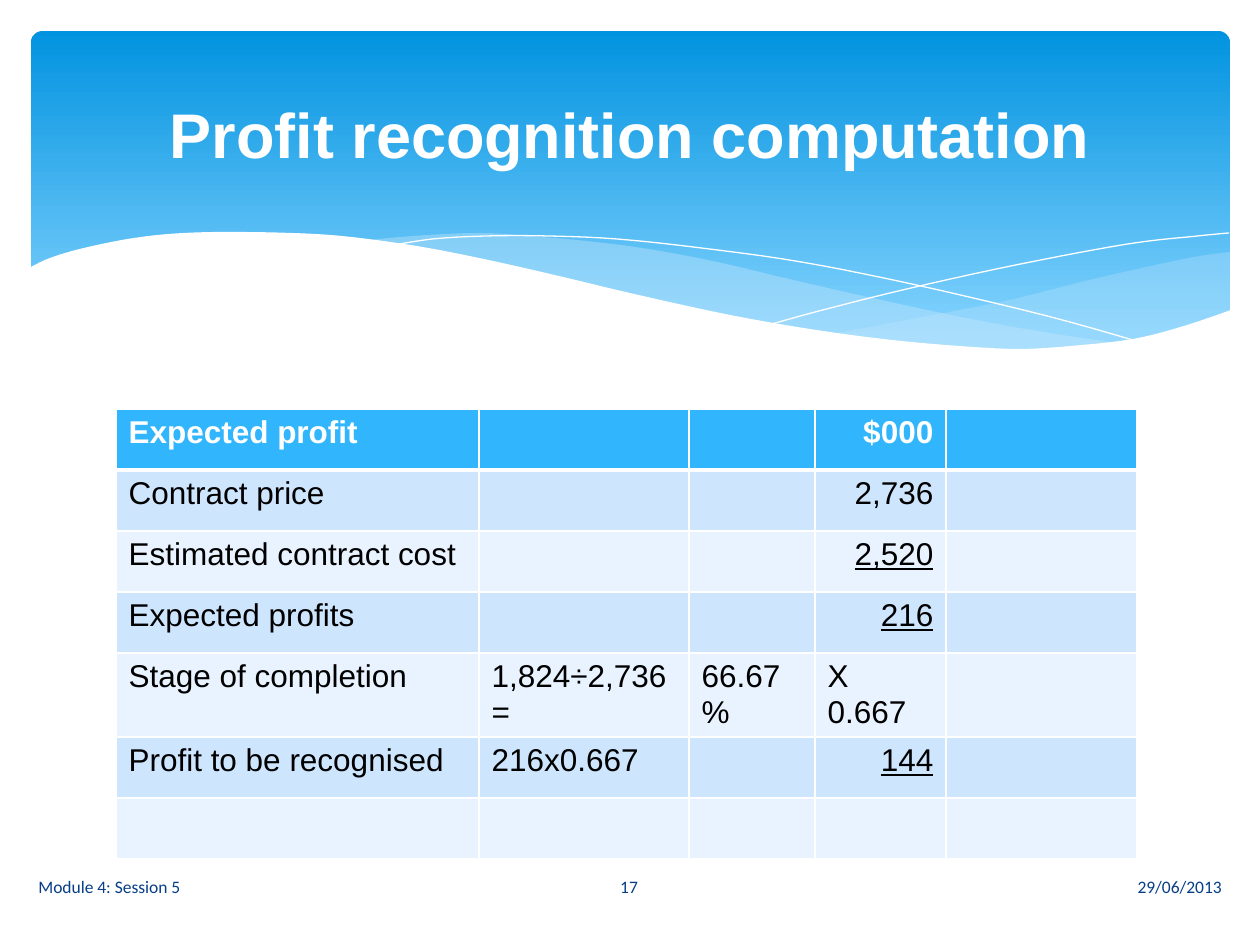
from lxml import etree
from pptx import Presentation
from pptx import util as u
from pptx.dml.color import RGBColor
from pptx.enum import shapes, text
from pptx.oxml import ns

PX = u.Inches(1) / 126
COLORS = {"white": "FFFFFF", "black": "000000", "navy": "073E87", "mist": "C6E7FC",
          "top": "0293E0", "bottom": "83D3FE", "header": "31B6FD",
          "band": "CEE5FE", "pale": "E8F3FF"}
LEFT, CENTER, RIGHT = text.PP_ALIGN.LEFT, text.PP_ALIGN.CENTER, text.PP_ALIGN.RIGHT

RIGHT_SWELL = [
    [(1230, 252), (1194, 257), (1142, 268), (1085, 281), (1014, 299), (949, 312), (833, 334)],
    [(833, 334), (888, 341), (954, 348), (1012, 350), (1076, 348), (1130, 340), (1178, 330),
     (1230, 311)]]
MIDDLE_SWELL = [
    [(1125, 344), (1055, 334), (976, 320), (890, 302), (793, 280), (717, 262), (648, 249),
     (586, 241), (529, 236), (479, 233), (413, 236), (360, 241)],
    [(360, 241), (431, 251), (509, 266), (566, 280), (668, 302), (757, 321), (838, 335),
     (910, 345), (989, 350), (1056, 350), (1125, 344)]]
FALLING_LINE = [(389, 246), (433, 239), (488, 236), (546, 236), (616, 239), (701, 248),
                (801, 262), (916, 285), (1047, 316), (1143, 343)]
RISING_LINE = [(772, 324), (823, 310), (907, 289), (1016, 265), (1128, 244), (1198, 236),
               (1229, 233)]
WHITE_WAVE = [
    [(1231, 310), (1184, 326), (1133, 339), (1071, 346), (1019, 349), (959, 346), (892, 340),
     (816, 330), (730, 315), (634, 294), (563, 277), (493, 261), (428, 248), (368, 239),
     (315, 234), (243, 232), (184, 233), (134, 238), (84, 248), (50, 258), (29, 268)],
    [(29, 415), (1231, 415)]]

COLUMNS = [363, 210, 126, 131, 191]
ROW_HEIGHTS = [61, 61, 61, 61, 84, 61, 61]
ROWS = [["Expected profit", "", "", "$000", ""],
        ["Contract price", "", "", "2,736", ""],
        ["Estimated contract cost", "", "", "2,520", ""],
        ["Expected profits", "", "", "216", ""],
        ["Stage of completion", "1,824÷2,736=", "66.67%", "X 0.667", ""],
        ["Profit to be recognised", "216x0.667", "", "144", ""],
        ["", "", "", "", ""]]
UNDERLINED = {"2,520", "216", "144"}


def px(n):
    return u.Emu(round(n * PX))


def rgb(name):
    return RGBColor.from_string(COLORS[name])


def set_font(p, face, size, color, bold=False):
    f = p.font
    f.name, f.size, f.bold = face, u.Pt(size), bold
    f.color.rgb = rgb(color)


def smooth(points, steps=5):
    ends = [points[0], *points, points[-1]]
    curve = [points[0]]
    for a, b, c, d in zip(ends, ends[1:], ends[2:], ends[3:]):
        for t in (i / steps for i in range(1, steps + 1)):
            curve.append(tuple(
                b[k] + t * (c[k] - a[k]) / 2
                + t ** 2 * (2 * a[k] - 5 * b[k] + 4 * c[k] - d[k]) / 2
                + t ** 3 * (3 * b[k] - a[k] - 3 * c[k] + d[k]) / 2 for k in (0, 1)))
    return curve


def add_outline(s, points, close):
    emu = [(px(x), px(y)) for x, y in points]
    fb = s.shapes.build_freeform(*emu[0])
    fb.add_line_segments(emu[1:], close=close)
    sp = fb.convert_to_shape()
    sp.shadow.inherit = False
    return sp


def add_wave(s, edges, color, alpha=100):
    sp = add_outline(s, [pt for edge in edges for pt in smooth(edge)], True)
    sp.fill.solid()
    sp.fill.fore_color.rgb = rgb(color)
    sp.line.fill.background()
    if alpha < 100:
        clr = sp.fill._xPr.find(".//" + ns.qn("a:srgbClr"))
        etree.SubElement(clr, ns.qn("a:alpha"), val=str(alpha * 1000))


def add_hairline(s, points):
    sp = add_outline(s, smooth(points), False)
    sp.fill.background()
    sp.line.color.rgb = rgb("white")
    sp.line.width = u.Pt(0)


def add_banner(s):
    sp = s.shapes.add_shape(shapes.MSO_SHAPE.ROUNDED_RECTANGLE,
                            px(31), px(31), px(1199), px(340))
    sp.adjustments[0] = 0.034
    sp.shadow.inherit = False
    sp.line.fill.background()
    sp.fill.gradient()
    sp.fill.gradient_angle = 270
    for stop, color, place in zip(sp.fill.gradient_stops, ("top", "bottom"), (0, 0.9)):
        stop.color.rgb = rgb(color)
        stop.position = place


def add_text(s, box, words, align, *font):
    tf = s.shapes.add_textbox(*map(px, box)).text_frame
    tf.word_wrap = True
    tf.vertical_anchor = text.MSO_ANCHOR.MIDDLE
    p = tf.paragraphs[0]
    p.text = words
    p.alignment = align
    set_font(p, *font)


def set_borders(cell, header):
    tc_pr = cell._tc.get_or_add_tcPr()
    for i, side in enumerate("LRTB"):
        width = u.Pt(3 if header and side == "B" else 1)
        ln = etree.Element(ns.qn("a:ln" + side), w=str(width))
        fill = etree.SubElement(ln, ns.qn("a:solidFill"))
        etree.SubElement(fill, ns.qn("a:srgbClr"), val=COLORS["white"])
        tc_pr.insert(i, ln)


def fill_cell(cell, words, row, col):
    header = row == 0
    cell.fill.solid()
    cell.fill.fore_color.rgb = rgb("header" if header else "band" if row % 2 else "pale")
    set_borders(cell, header)
    p = cell.text_frame.paragraphs[0]
    p.text = words
    p.alignment = RIGHT if col == 3 and not words.startswith("X") else LEFT
    set_font(p, "Arial", 18, "white" if header else "black", header)
    if words in UNDERLINED:
        p.font.underline = True


def add_profit_table(s):
    tbl = s.shapes.add_table(len(ROWS), len(COLUMNS), px(116), px(409),
                             px(sum(COLUMNS)), px(sum(ROW_HEIGHTS))).table
    for column, width in zip(tbl.columns, COLUMNS):
        column.width = px(width)
    for i, (height, row) in enumerate(zip(ROW_HEIGHTS, ROWS)):
        tbl.rows[i].height = px(height)
        for j, words in enumerate(row):
            fill_cell(tbl.cell(i, j), words, i, j)


def main():
    prs = Presentation()
    prs.slide_width, prs.slide_height = px(1260), px(945)
    s = prs.slides.add_slide(prs.slide_layouts[6])
    add_banner(s)
    add_wave(s, RIGHT_SWELL, "mist", 29)
    add_wave(s, MIDDLE_SWELL, "mist", 40)
    add_hairline(s, FALLING_LINE)
    add_hairline(s, RISING_LINE)
    add_wave(s, WHITE_WAVE, "white")
    add_profit_table(s)
    for left, width, words, align in ((712, 522, "29/06/2013", RIGHT),
                                      (26, 522, "Module 4: Session 5", LEFT),
                                      (549, 160, "17", CENTER)):
        add_text(s, (left, 862, width, 50), words, align, "Calibri", 10, "navy")
    add_text(s, (63, 47, 1134, 173), "Profit recognition computation", CENTER,
             "Arial", 36, "white", True)
    prs.save("out.pptx")


if __name__ == "__main__":
    main()
